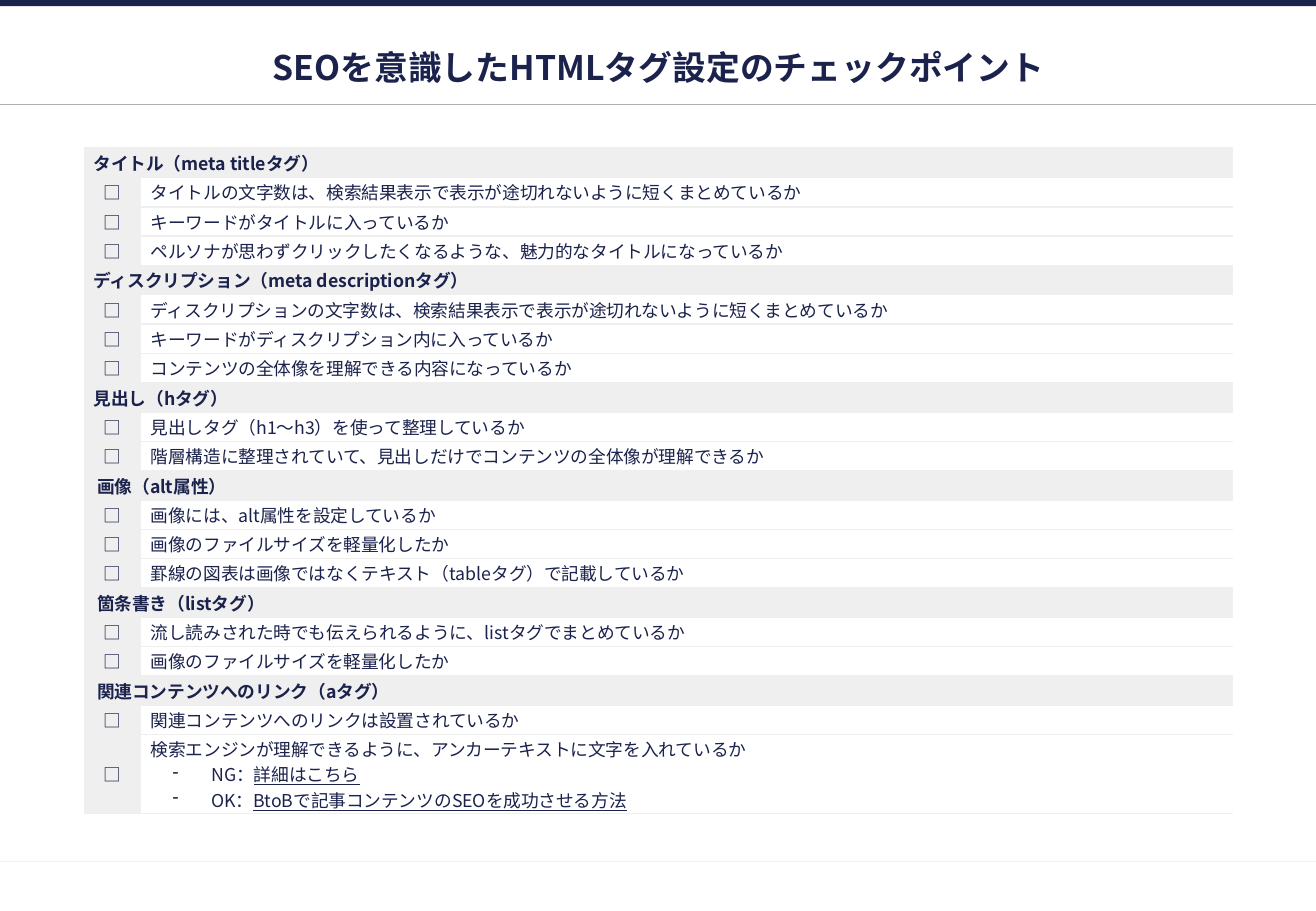
"""Build a one-slide checklist for setting HTML tags with SEO in mind."""
from dataclasses import dataclass

from lxml import etree
from pptx import Presentation
from pptx.dml.color import RGBColor
from pptx.enum import shapes, text
from pptx.oxml import ns
from pptx.util import Inches, Pt


@dataclass(frozen=True)
class Theme:
    """Colours, font and type sizes of the slide."""
    navy: str = "1B224C"
    white: str = "FFFFFF"
    band: str = "EFEFEF"
    title_rule: str = "AFAFAF"
    footer_rule: str = "F2F2F2"
    font: str = "Noto Sans CJK JP"
    title_size: float = 20
    body_size: float = 10.5
    rule_width: float = 0.75
    border_width: float = 1


THEME = Theme()
WIDTH, HEIGHT = 10.83, 7.5
LEFT, CONTENT_WIDTH = 0.69, 9.46
TABLE_TOP, TABLE_HEIGHT = 1.22, 5.46
CHECK_WIDTH, TALL_ROW = 0.47, 0.63
CELL_INSET, INDENTED_INSET = 0.08, 0.11

TITLE = "SEOを意識したHTMLタグ設定のチェックポイント"
LINK_CHECK = "検索エンジンが理解できるように、アンカーテキストに文字を入れているか"
LINK_EXAMPLES = [
    ("NG：", "詳細はこちら"),
    ("OK：", "BtoBで記事コンテンツのSEOを成功させる方法"),
]
SECTIONS = [
    ("タイトル（meta titleタグ）", CELL_INSET, [
        "タイトルの文字数は、検索結果表示で表示が途切れないように短くまとめているか",
        "キーワードがタイトルに入っているか",
        "ペルソナが思わずクリックしたくなるような、魅力的なタイトルになっているか",
    ]),
    ("ディスクリプション（meta descriptionタグ）", CELL_INSET, [
        "ディスクリプションの文字数は、検索結果表示で表示が途切れないように短くまとめているか",
        "キーワードがディスクリプション内に入っているか",
        "コンテンツの全体像を理解できる内容になっているか",
    ]),
    ("見出し（hタグ）", CELL_INSET, [
        "見出しタグ（h1〜h3）を使って整理しているか",
        "階層構造に整理されていて、見出しだけでコンテンツの全体像が理解できるか",
    ]),
    ("画像（alt属性）", INDENTED_INSET, [
        "画像には、alt属性を設定しているか",
        "画像のファイルサイズを軽量化したか",
        "罫線の図表は画像ではなくテキスト（tableタグ）で記載しているか",
    ]),
    ("箇条書き（listタグ）", INDENTED_INSET, [
        "流し読みされた時でも伝えられるように、listタグでまとめているか",
        "画像のファイルサイズを軽量化したか",
    ]),
    ("関連コンテンツへのリンク（aタグ）", INDENTED_INSET, [
        "関連コンテンツへのリンクは設置されているか",
        LINK_CHECK,
    ]),
]


def add_element(parent, tag, **attributes):
    """Append a drawing element to a parent and return it."""
    return etree.SubElement(parent, ns.qn(tag), attributes)


def style_paragraph(paragraph, size, bold=False, align=text.PP_ALIGN.LEFT):
    """Set the type and alignment of a paragraph."""
    paragraph.alignment = align
    font = paragraph.font
    font.size, font.bold, font.name = Pt(size), bold, THEME.font
    font.color.rgb = RGBColor.from_string(THEME.navy)
    properties = paragraph._p.get_or_add_pPr().get_or_add_defRPr()
    add_element(properties, "a:ea", typeface=THEME.font)


def add_title(slide):
    """Fill and place the title placeholder."""
    title = slide.shapes.title
    title.left, title.top = Inches(LEFT), Inches(0.34)
    title.width, title.height = Inches(CONTENT_WIDTH), Inches(0.42)
    frame = title.text_frame
    frame.margin_left = frame.margin_right = Inches(0.04)
    frame.margin_top = frame.margin_bottom = Inches(0.04)
    frame.vertical_anchor = text.MSO_ANCHOR.MIDDLE
    frame.auto_size = text.MSO_AUTO_SIZE.NONE
    frame.text = TITLE
    style_paragraph(frame.paragraphs[0], THEME.title_size, True, text.PP_ALIGN.CENTER)


def add_top_bar(slide):
    """Draw the bar along the top edge."""
    shape = slide.shapes.add_shape(
        shapes.MSO_SHAPE.RECTANGLE, 0, 0, Inches(WIDTH), Inches(0.05))
    shape.shadow.inherit = False
    shape.fill.solid()
    shape.fill.fore_color.rgb = RGBColor.from_string(THEME.navy)
    shape.line.fill.background()


def add_rule(slide, top, color):
    """Draw a rule across the slide."""
    connector = slide.shapes.add_connector(
        shapes.MSO_CONNECTOR.STRAIGHT, 0, Inches(top), Inches(WIDTH), Inches(top))
    connector.line.color.rgb = RGBColor.from_string(color)
    connector.line.width = Pt(THEME.rule_width)
    add_element(connector._element.spPr, "a:effectLst")


def style_cell(cell, fill, inset=CELL_INSET):
    """Set the margins, horizontal borders and fill of a cell."""
    cell.margin_left, cell.margin_right = Inches(inset), Inches(CELL_INSET)
    cell.margin_top = cell.margin_bottom = Inches(0.01)
    cell.vertical_anchor = text.MSO_ANCHOR.MIDDLE
    properties = cell._tc.get_or_add_tcPr()
    for side in ("a:lnL", "a:lnR"):
        add_element(add_element(properties, side, w="0"), "a:noFill")
    for side in ("a:lnT", "a:lnB"):
        border = add_element(properties, side, w=str(Pt(THEME.border_width)))
        add_element(add_element(border, "a:solidFill"), "a:srgbClr", val=THEME.band)
    cell.fill.solid()
    cell.fill.fore_color.rgb = RGBColor.from_string(fill)


def fill_cell(cell, content, bold=False, align=text.PP_ALIGN.LEFT):
    """Write one paragraph into a cell."""
    cell.text = content
    style_paragraph(cell.text_frame.paragraphs[0], THEME.body_size, bold, align)


def add_example(frame, label, link):
    """Add a dashed example with an underlined link text."""
    paragraph = frame.add_paragraph()
    properties = paragraph._p.get_or_add_pPr()
    properties.set("marL", str(Inches(0.5)))
    properties.set("indent", str(Inches(-0.32)))
    add_element(add_element(properties, "a:buClr"), "a:srgbClr", val=THEME.navy)
    add_element(properties, "a:buChar", char="-")
    style_paragraph(paragraph, THEME.body_size)
    paragraph.add_run().text = label
    run = paragraph.add_run()
    run.text = link
    run.font.underline = True


def add_heading_row(table, row, heading, inset):
    """Write a section heading across both columns."""
    cell, spanned = table.cell(row, 0), table.cell(row, 1)
    for part in (cell, spanned):
        style_cell(part, THEME.band, inset)
    cell.merge(spanned)
    fill_cell(cell, heading, bold=True)


def add_check_row(table, row, check):
    """Write a check box and its check point."""
    box, point = table.cell(row, 0), table.cell(row, 1)
    style_cell(box, THEME.band)
    fill_cell(box, "□", align=text.PP_ALIGN.CENTER)
    style_cell(point, THEME.white)
    fill_cell(point, check)
    if check == LINK_CHECK:
        for label, link in LINK_EXAMPLES:
            add_example(point.text_frame, label, link)


def add_checklist(slide):
    """Build the table of sections and check points."""
    count = sum(1 + len(checks) for _, _, checks in SECTIONS)
    table = slide.shapes.add_table(
        count, 2, Inches(LEFT), Inches(TABLE_TOP),
        Inches(CONTENT_WIDTH), Inches(TABLE_HEIGHT)).table
    table.first_row = table.horz_banding = False
    table.columns[0].width = Inches(CHECK_WIDTH)
    table.columns[1].width = Inches(CONTENT_WIDTH - CHECK_WIDTH)
    for table_row in table.rows:
        table_row.height = Inches((TABLE_HEIGHT - TALL_ROW) / (count - 1))
    table.rows[count - 1].height = Inches(TALL_ROW)
    row = 0
    for heading, inset, checks in SECTIONS:
        add_heading_row(table, row, heading, inset)
        for offset, check in enumerate(checks, 1):
            add_check_row(table, row + offset, check)
        row += 1 + len(checks)


def main():
    """Build and save the presentation."""
    presentation = Presentation()
    presentation.slide_width, presentation.slide_height = Inches(WIDTH), Inches(HEIGHT)
    slide = presentation.slides.add_slide(presentation.slide_layouts[5])
    add_rule(slide, 7.09, THEME.footer_rule)
    add_top_bar(slide)
    add_rule(slide, 0.86, THEME.title_rule)
    add_title(slide)
    add_checklist(slide)
    presentation.save("out.pptx")


if __name__ == "__main__":
    main()
